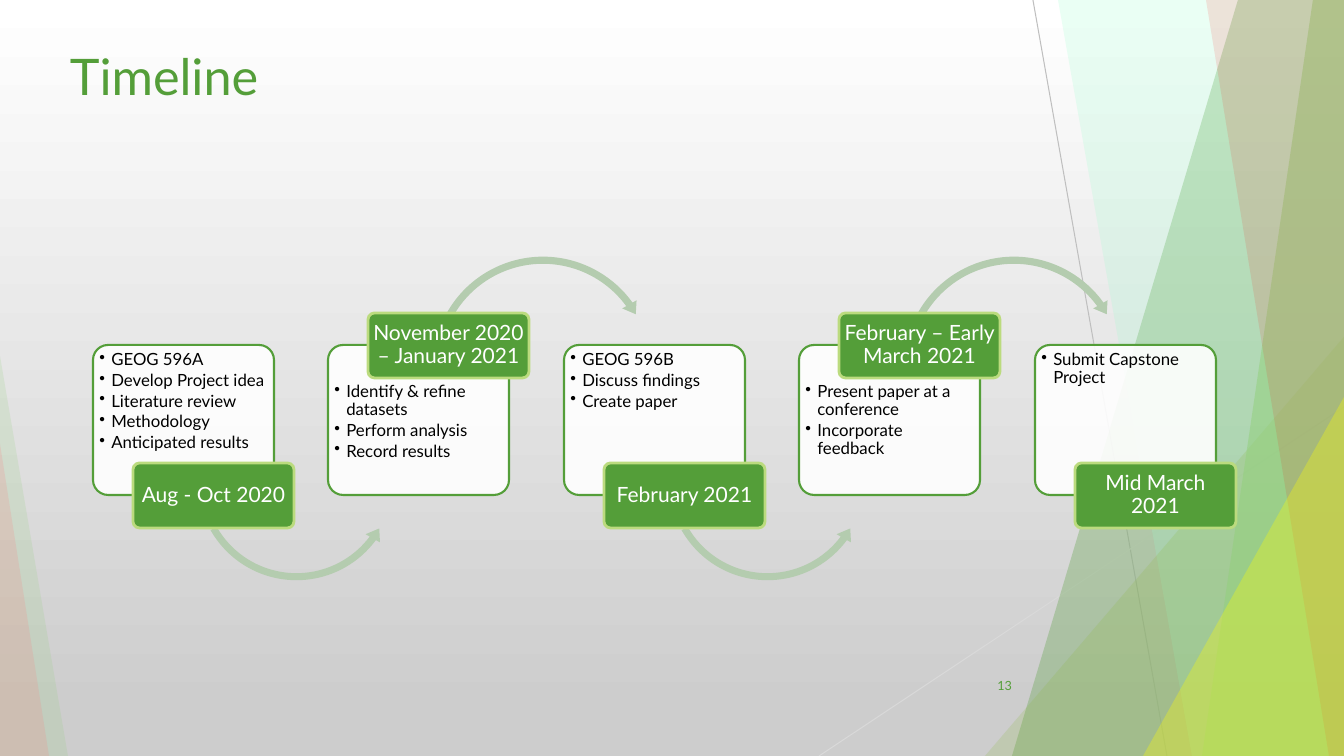
from lxml.etree import SubElement
from pptx import Presentation
from pptx.dml.color import RGBColor
from pptx.enum.shapes import MSO_CONNECTOR, MSO_SHAPE
from pptx.enum.text import MSO_ANCHOR, PP_ALIGN
from pptx.oxml.ns import qn
from pptx.util import Emu, Pt

GREEN, WHITE, BLACK = "549E39", "FFFFFF", "000000"


def px(n):
    return Emu(round(n * 914400 / 100.8))


def tint(code):
    return RGBColor.from_string(code)


class Board:
    font = "Lato"

    def __init__(self, deck):
        self.slide = deck.slides.add_slide(deck.slide_layouts[6])
        self.shapes = self.slide.shapes

    def backdrop(self, stops):
        fill = self.slide.background.fill
        fill.gradient()
        fill.gradient_angle = 270
        for stop, (place, color) in zip(fill.gradient_stops, stops):
            stop.position = place
            stop.color.rgb = tint(color)

    def paint(self, shape, color, alpha=100, edge=None, width=0):
        shape.shadow.inherit = False
        shape.fill.solid()
        shape.fill.fore_color.rgb = tint(color)
        if alpha < 100:
            node = shape._element.spPr.find(qn("a:solidFill"))[0]
            SubElement(node, qn("a:alpha"), val=str(alpha * 1000))
        if edge:
            shape.line.color.rgb = tint(edge)
            shape.line.width = Pt(width)
        else:
            shape.line.fill.background()
        return shape

    def shape(self, kind, box, adjust, color, **style):
        item = self.shapes.add_shape(kind, *map(px, box))
        for i, value in enumerate(adjust):
            item.adjustments[i] = value
        return self.paint(item, color, **style)

    def facet(self, points, color, alpha):
        spots = [(px(x), px(y)) for x, y in points]
        pen = self.shapes.build_freeform(*spots[0])
        pen.add_line_segments(spots[1:], close=True)
        self.paint(pen.convert_to_shape(), color, alpha)

    def line(self, start, end, color):
        item = self.shapes.add_connector(
            MSO_CONNECTOR.STRAIGHT, *map(px, start + end))
        item.line.color.rgb = tint(color)
        item.line.width = Pt(0.75)
        SubElement(item._element.spPr, qn("a:effectLst"))

    def label(self, shape, lines, size, color, inset, align=PP_ALIGN.LEFT,
              anchor=MSO_ANCHOR.TOP, space=0.9, bullet=False):
        frame = shape.text_frame
        frame.word_wrap = True
        frame.vertical_anchor = anchor
        (frame.margin_left, frame.margin_top,
         frame.margin_right, frame.margin_bottom) = map(px, inset)
        for i, line in enumerate(lines):
            para = frame.add_paragraph() if i else frame.paragraphs[0]
            para.alignment = align
            para.line_spacing = space
            if bullet:
                para.space_after = Pt(1.8)
                props = para._p.get_or_add_pPr()
                props.set("marL", str(px(12)))
                props.set("indent", str(px(-12)))
                SubElement(props, qn("a:buChar"), char="•")
            run = para.add_run()
            run.text = line
            run.font.name = self.font
            run.font.size = Pt(size)
            run.font.color.rgb = tint(color)

    def text(self, box, line, size, color, **style):
        item = self.shapes.add_textbox(*map(px, box))
        self.label(item, [line], size, color, (10, 5, 10, 5), space=1, **style)

    def step(self, x, date, tasks, high, last):
        # Card with its tasks, below the date when that sits on top
        card = self.shape(MSO_SHAPE.ROUNDED_RECTANGLE, (x, 345, 181, 150),
                          [0.1], WHITE, alpha=90, edge=GREEN, width=1.5)
        self.label(card, tasks, 12, BLACK, (2, 34 if high else 2, 2, 2),
                   bullet=True)
        # Arrow to the next card
        if not last:
            if high:
                kind, box = MSO_SHAPE.CIRCULAR_ARROW, (x + 100, 252, 230, 230)
                adjust = [0.031, 3.787, 194.458, 125.755, 0.036]
            else:
                kind = MSO_SHAPE.LEFT_CIRCULAR_ARROW
                box = (x + 100, 378, 207, 207)
                adjust = [0.034, 4.248, 22.003, 90.245, 0.04]
            self.shape(kind, box, adjust, "B4CCAF")
        # Date tag
        tag = self.shape(MSO_SHAPE.ROUNDED_RECTANGLE,
                         (x + 40, 313 if high else 463, 161, 65),
                         [0.1], GREEN, edge="BBDB7E", width=2)
        self.label(tag, [date], 15, WHITE, (3, 2, 3, 2),
                   align=PP_ALIGN.CENTER, anchor=MSO_ANCHOR.MIDDLE)


STEPS = [
    ("Aug - Oct 2020", ["GEOG 596A", "Develop Project idea",
                        "Literature review", "Methodology",
                        "Anticipated results"]),
    ("November 2020 – January 2021", ["Identify & refine datasets",
                                      "Perform analysis", "Record results"]),
    ("February 2021", ["GEOG 596B", "Discuss findings", "Create paper"]),
    ("February – Early March 2021", ["Present paper at a conference",
                                     "Incorporate feedback"]),
    ("Mid March 2021", ["Submit Capstone Project"]),
]


def main():
    deck = Presentation()
    deck.slide_width, deck.slide_height = px(1344), px(756)
    board = Board(deck)
    board.backdrop([(0, WHITE), (0.94, "CDCDCD")])

    # Facets along both edges
    def wedge(box, tip, color, alpha):
        board.shape(MSO_SHAPE.ISOSCELES_TRIANGLE, box, [tip], color,
                    alpha=alpha)

    def band(top, base, color, alpha):
        board.facet([(top, 0), (1344, 0), (1344, 756), (base, 756)],
                    color, alpha)

    wedge((0, 356, 68, 400), 0, "93D07D", 18)
    board.line((1033, 0), (1167, 756), "BFBFBF")
    board.line((1344, 407), (819, 756), "D9D9D9")
    band(1238, 1012, GREEN, 30)
    band(1058, 1192, "99FFCC", 20)
    wedge((985, 337, 359, 419), 1, "8AB833", 18)
    band(1313, 1202, "93D07D", 54)
    band(1206, 1329, "FF0000", 11)
    wedge((1143, 397, 201, 359), 1, "FFFF00", 30)
    wedge((0, 444, 49, 312), 0, "FF7C80", 18)

    # Title and page number
    board.text((60, 40, 948, 145), "Timeline", 36, GREEN)
    board.text((947, 666, 75, 40), "13", 9, GREEN,
               align=PP_ALIGN.RIGHT, anchor=MSO_ANCHOR.MIDDLE)

    # Steps, with dates low and high in turn
    for i, (date, tasks) in enumerate(STEPS):
        board.step(93 + 942 * i // 4, date, tasks,
                   high=i % 2 == 1, last=i == len(STEPS) - 1)

    deck.save("out.pptx")


if __name__ == "__main__":
    main()
